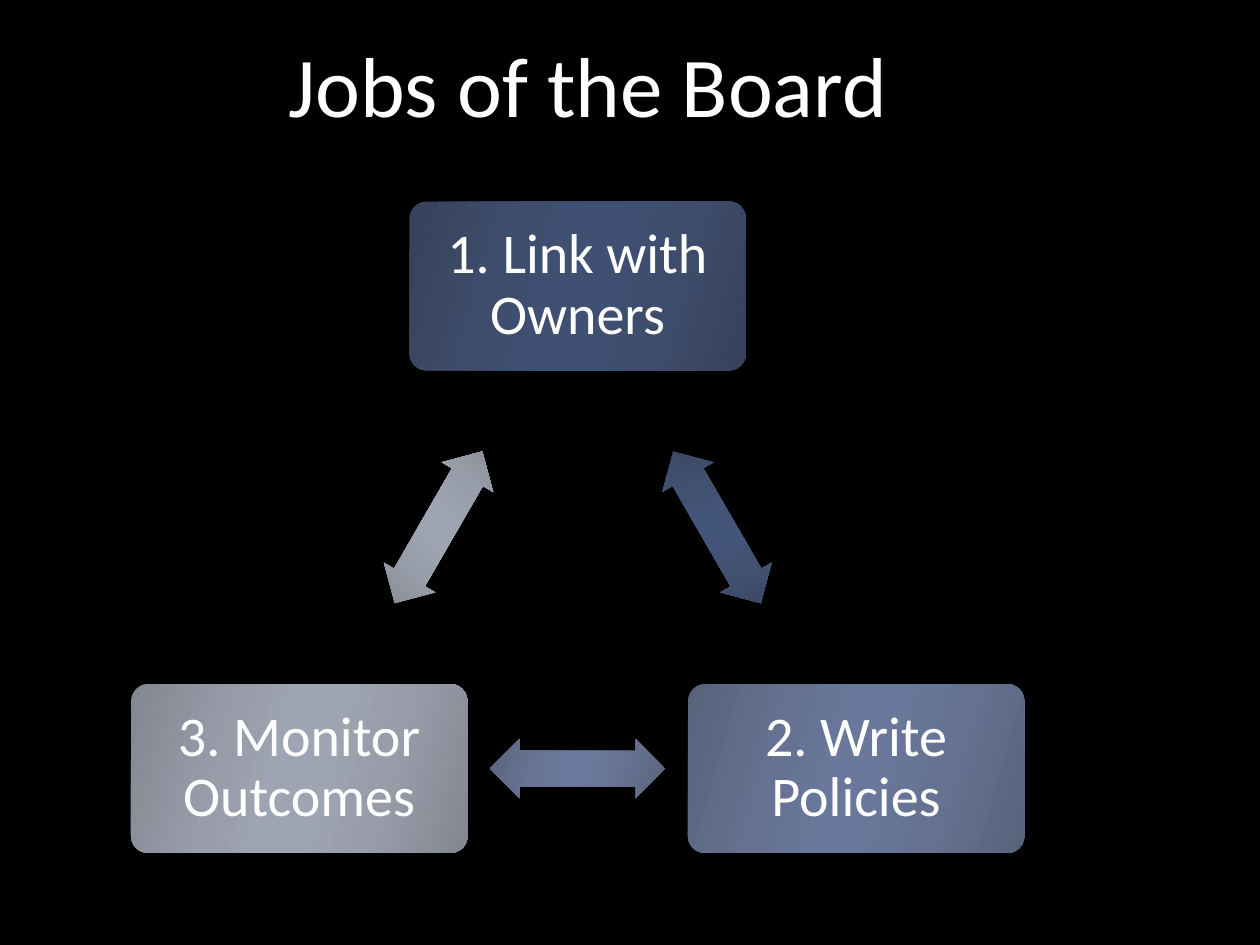
import math
from dataclasses import dataclass

from lxml import etree
from pptx import Presentation
from pptx.dml.color import RGBColor
from pptx.enum.shapes import MSO_SHAPE
from pptx.enum.text import MSO_ANCHOR, MSO_AUTO_SIZE, PP_ALIGN
from pptx.oxml.ns import qn
from pptx.util import Inches, Pt

ROUND_RECT = MSO_SHAPE.ROUNDED_RECTANGLE
DOUBLE_ARROW = MSO_SHAPE.LEFT_RIGHT_ARROW
CENTER = PP_ALIGN.CENTER
MIDDLE, BOTTOM = MSO_ANCHOR.MIDDLE, MSO_ANCHOR.BOTTOM
NO_AUTOFIT = MSO_AUTO_SIZE.NONE
TITLE_ONLY = 5


@dataclass(frozen=True)
class Theme:
    font: str = "Calibri"
    background: str = "000000"
    text: str = "FFFFFF"
    title_size: float = 48.6
    box_size: float = 32
    gradient_angle: int = 16
    box_fills: tuple = (
        ("37435B", "3E4D6C", "3F5073"),
        ("58637B", "657292", "68779A"),
        ("838791", "999DAA", "9FA4B2"),
    )
    arrow_fills: tuple = (
        ("3A465F", "415172", "435579"),
        ("5A647C", "677493", "6A799C"),
        ("838790", "989DAA", "9EA4B2"),
    )


THEME = Theme()
JOBS = ("1. Link with Owners", "2. Write Policies", "3. Monitor Outcomes")
BOX_W, BOX_H = 2.67, 1.34
ARROW_W, ARROW_H = 1.39, 0.47


def write_text(sp, text, *, size, anchor, inset=0.1, line_spacing=None, space_before=0):
    tf = sp.text_frame
    tf.word_wrap = True
    tf.auto_size = NO_AUTOFIT
    tf.vertical_anchor = anchor
    tf.margin_left = tf.margin_right = Inches(inset)
    tf.margin_top = tf.margin_bottom = Inches(min(inset, 0.13))
    p = tf.paragraphs[0]
    p.alignment = CENTER
    p.line_spacing = line_spacing
    p.space_before = Pt(space_before)
    r = p.add_run()
    r.text = text
    r.font.name = THEME.font
    r.font.size = Pt(size)
    r.font.color.rgb = RGBColor.from_string(THEME.text)


def fill_gradient(sp, colors):
    edge, mid, core = colors
    sp.fill.gradient()
    sp.fill.gradient_angle = -THEME.gradient_angle % 360
    stops = sp.element.spPr.find(qn("a:gradFill")).find(qn("a:gsLst"))
    for stop in list(stops):
        stops.remove(stop)
    for pos, color in zip((0, 30, 45, 55, 73, 100), (edge, mid, core, core, mid, edge)):
        stop = etree.SubElement(stops, qn("a:gs"), pos=str(pos * 1000))
        etree.SubElement(stop, qn("a:srgbClr"), val=color)


def add_centered(s, kind, center, size, colors, adjustments):
    (cx, cy), (w, h) = center, size
    sp = s.shapes.add_shape(
        kind, Inches(cx - w / 2), Inches(cy - h / 2), Inches(w), Inches(h)
    )
    for i, value in enumerate(adjustments):
        sp.adjustments[i] = value
    fill_gradient(sp, colors)
    sp.line.fill.background()
    sp.shadow.inherit = False
    return sp


def add_title(s, text, left, top, width, height):
    sp = s.shapes.title
    sp.left, sp.top = Inches(left), Inches(top)
    sp.width, sp.height = Inches(width), Inches(height)
    write_text(sp, text, size=THEME.title_size, anchor=BOTTOM, space_before=4)


def add_cycle(s, jobs, left, top, width, height):
    upper, lower = top + BOX_H / 2, top + height - BOX_H / 2
    centers = (
        (left + width / 2, upper),
        (left + width - BOX_W / 2, lower),
        (left + BOX_W / 2, lower),
    )
    for i, (job, start) in enumerate(zip(jobs, centers)):
        box = add_centered(
            s, ROUND_RECT, start, (BOX_W, BOX_H), THEME.box_fills[i], (0.1,)
        )
        write_text(
            box, job, size=THEME.box_size, anchor=MIDDLE, inset=0.13, line_spacing=0.9
        )
        end = centers[(i + 1) % len(centers)]
        midpoint = ((start[0] + end[0]) / 2, (start[1] + end[1]) / 2)
        arrow = add_centered(
            s, DOUBLE_ARROW, midpoint, (ARROW_W, ARROW_H), THEME.arrow_fills[i], (0.6, 0.5)
        )
        angle = math.degrees(math.atan2(end[1] - start[1], end[0] - start[0]))
        arrow.rotation = round(angle) % 360


def main():
    prs = Presentation()
    prs.slide_width, prs.slide_height = Inches(10), Inches(7.5)
    s = prs.slides.add_slide(prs.slide_layouts[TITLE_ONLY])
    s.background.fill.solid()
    s.background.fill.fore_color.rgb = RGBColor.from_string(THEME.background)
    add_title(s, " Jobs of the Board", 0.39, 0.25, 8.4, 0.92)
    add_cycle(s, JOBS, 1.04, 1.6, 7.09, 5.17)
    prs.save("out.pptx")


if __name__ == "__main__":
    main()
